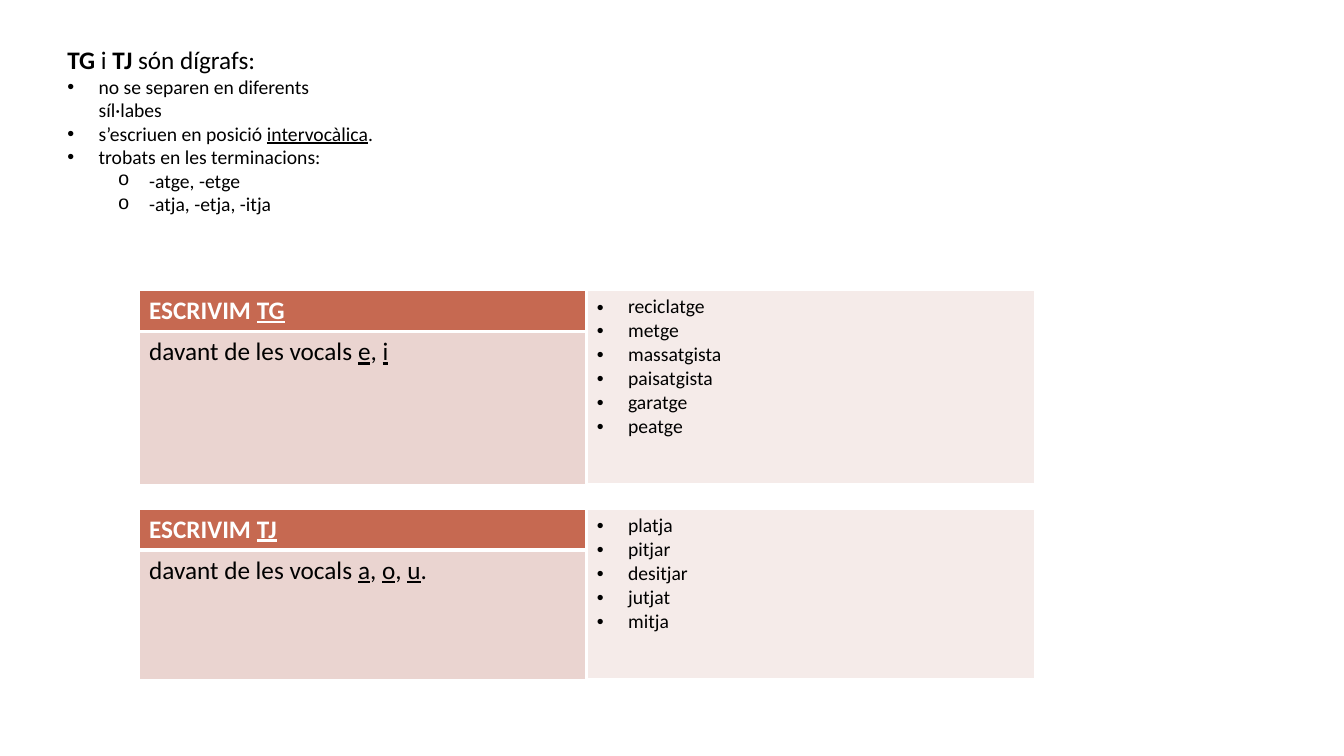
from pptx import Presentation
from pptx.dml.color import RGBColor
from pptx.enum.text import MSO_AUTO_SIZE
from pptx.oxml import parse_xml
from pptx.oxml.ns import nsdecls
from pptx.util import Inches, Pt

BLACK = RGBColor(0x00, 0x00, 0x00)
WHITE = RGBColor(0xFF, 0xFF, 0xFF)
RUST = RGBColor(0xC6, 0x69, 0x51)
ROSE = RGBColor(0xEA, 0xD4, 0xD0)
BLUSH = RGBColor(0xF5, 0xEB, 0xE9)
FIT_SHAPE = MSO_AUTO_SIZE.SHAPE_TO_FIT_TEXT


def add_runs(p, runs, size, color=BLACK):
    """Add (text, style) runs, where style may hold b (bold) and u (underline)."""
    for text, style in runs:
        r = p.add_run()
        r.text = text
        r.font.name = "Calibri"
        r.font.size = Pt(size)
        r.font.color.rgb = color
        r.font.bold = "b" in style
        r.font.underline = "u" in style


def add_list(tf, items, first):
    """Add bulleted (bullet, left indent, runs) items, reusing paragraph first if given."""
    for i, (bullet, indent, runs) in enumerate(items):
        p = first if first is not None and i == 0 else tf.add_paragraph()
        p.level = 1 if bullet == "o" else 0
        add_runs(p, runs, 14)
        pPr = p._p.get_or_add_pPr()
        pPr.set("marL", str(Inches(indent)))
        pPr.set("indent", str(Inches(-0.31)))
        font = "Courier New" if bullet == "o" else "Arial"
        pPr.append(parse_xml(f'<a:buFont {nsdecls("a")} typeface="{font}"/>'))
        pPr.append(parse_xml(f'<a:buChar {nsdecls("a")} char="{bullet}"/>'))


prs = Presentation()
prs.slide_width = Inches(13.33)
prs.slide_height = Inches(7.5)
s = prs.slides.add_slide(prs.slide_layouts[6])

# Rule tables: top, height of lower row, digraph, vowels, ending, examples
rules = [
    (2.88, 1.5, "TG", "ei", "",
     ["reciclatge", "metge", "massatgista", "paisatgista", "garatge", "peatge"]),
    (5.05, 1.27, "TJ", "aou", ".",
     ["platja", "pitjar", "desitjar", "jutjat", "mitja"]),
]
# Border widths in points: left, right, top, bottom
HEAD_BORDERS = (1, 2.25, 1, 3)
RULE_BORDERS = (1, 2.25, 3, 1)
WORD_BORDERS = (2.25, 1, 1, 3)

for top, height, digraph, vowels, ending, words in rules:
    table = s.shapes.add_table(2, 2, Inches(1.38), Inches(top),
                               Inches(8.88), Inches(0.41 + height)).table
    table.rows[0].height = Inches(0.41)
    table.rows[1].height = Inches(height)
    head, rule, examples = table.cell(0, 0), table.cell(1, 0), table.cell(0, 1)
    examples.merge(table.cell(1, 1))

    # Cell text
    add_runs(head.text_frame.paragraphs[0],
             [("ESCRIVIM ", "b"), (digraph, "bu")], 18, WHITE)
    runs = [("davant de les vocals ", "")]
    for i, vowel in enumerate(vowels):
        if i:
            runs.append((", ", ""))
        runs.append((vowel, "u"))
    if ending:
        runs.append((ending, ""))
    add_runs(rule.text_frame.paragraphs[0], runs, 18)
    tf = examples.text_frame
    add_list(tf, [("•", 0.31, [(word, "")]) for word in words], tf.paragraphs[0])

    # Fills and white borders
    for cell, fill, borders in [(head, RUST, HEAD_BORDERS),
                                (rule, ROSE, RULE_BORDERS),
                                (examples, BLUSH, WORD_BORDERS),
                                (table.cell(1, 1), BLUSH, WORD_BORDERS)]:
        tcPr = cell._tc.get_or_add_tcPr()
        for side, width in zip("LRTB", borders):
            tcPr.append(parse_xml(
                f'<a:ln{side} {nsdecls("a")} w="{Pt(width)}"><a:solidFill>'
                f'<a:srgbClr val="{WHITE}"/></a:solidFill></a:ln{side}>'))
        cell.fill.solid()
        cell.fill.fore_color.rgb = fill

# Introduction
sp = s.shapes.add_textbox(Inches(0.57), Inches(0.39), Inches(3.25), Inches(1.58))
tf = sp.text_frame
tf.word_wrap = True
tf.auto_size = FIT_SHAPE
add_runs(tf.paragraphs[0],
         [("TG", "b"), (" i ", ""), ("TJ", "b"), (" són dígrafs:", "")], 18)
add_list(tf, [
    ("•", 0.31, [("no se separen en diferents síl·labes", "")]),
    ("•", 0.31, [("s’escriuen en posició ", ""), ("intervocàlica", "u"), (".", "")]),
    ("•", 0.31, [("trobats en les terminacions:", "")]),
    ("o", 0.81, [("-atge, -etge", "")]),
    ("o", 0.81, [("-atja, -etja, -itja", "")]),
], None)

prs.save("out.pptx")
